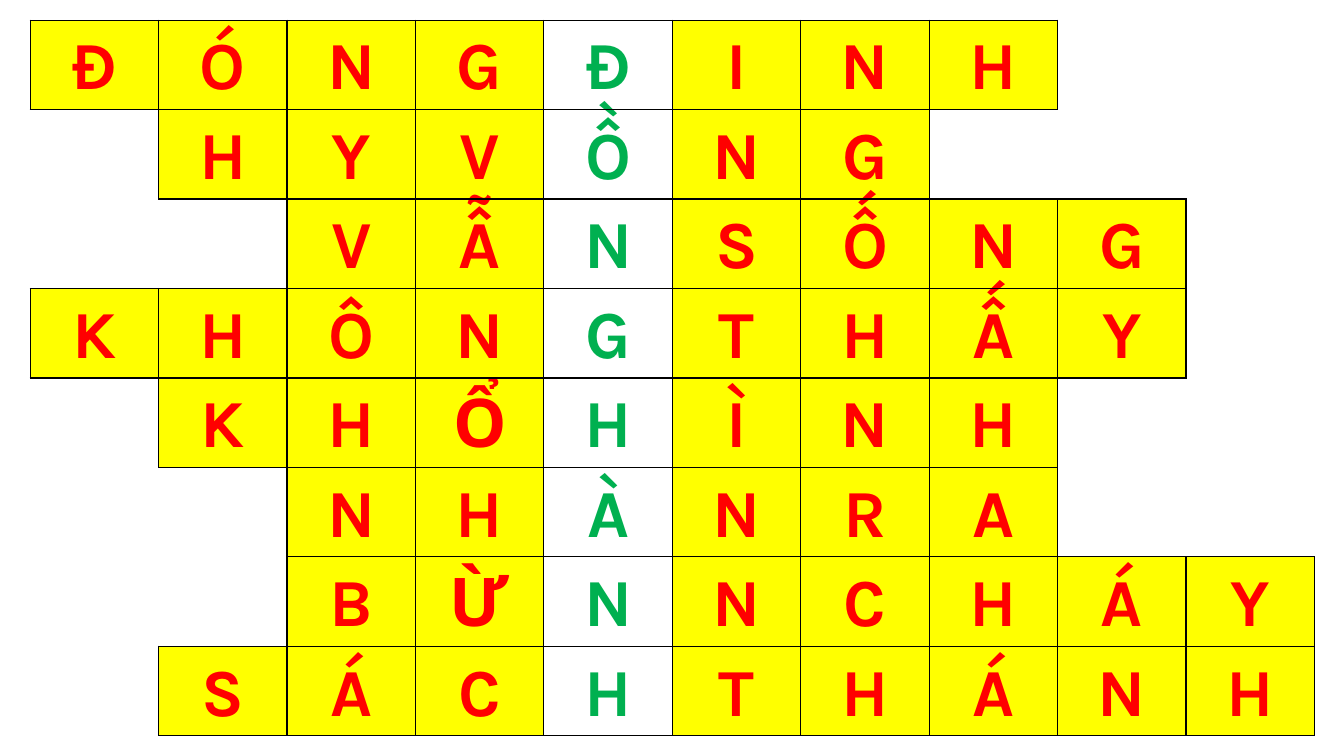
from lxml import etree
from pptx import Presentation
from pptx.dml.color import RGBColor
from pptx.enum.text import MSO_ANCHOR, PP_ALIGN
from pptx.oxml.ns import qn
from pptx.util import Inches, Pt

ANSWERS = [
    (0, "ĐÓNGĐINH"),
    (1, "HYVỒNG"),
    (2, "VẪNSỐNG"),
    (0, "KHÔNGTHẤY"),
    (1, "KHỔHÌNH"),
    (2, "NHÀNRA"),
    (2, "BỪNNCHÁY"),
    (1, "SÁCHTHÁNH"),
]
KEY_COLUMN = 4
COLUMNS = 10
LEFT, TOP, WIDTH, HEIGHT = 0.3, 0.2, 12.74, 7.1

RED = RGBColor(0xFF, 0x00, 0x00)
GREEN = RGBColor(0x00, 0xB0, 0x50)
YELLOW = RGBColor(0xFF, 0xFF, 0x00)
WHITE = RGBColor(0xFF, 0xFF, 0xFF)
BLACK = RGBColor(0x00, 0x00, 0x00)
FONT = "Karla"
CENTER = PP_ALIGN.CENTER
MIDDLE = MSO_ANCHOR.MIDDLE
SIDES = {"a:lnL": (0, -1), "a:lnR": (0, 1), "a:lnT": (-1, 0), "a:lnB": (1, 0)}


def draw_borders(cell, row, column, letters):
    properties = cell._tc.get_or_add_tcPr()
    for side, (down, across) in SIDES.items():
        line = etree.SubElement(properties, qn(side), w=str(Pt(1)))
        if (row, column) in letters or (row + down, column + across) in letters:
            fill = etree.SubElement(line, qn("a:solidFill"))
            etree.SubElement(fill, qn("a:srgbClr"), val=str(BLACK))
        else:
            etree.SubElement(line, qn("a:noFill"))


def write_letter(cell, letter, is_key):
    cell.fill.solid()
    cell.fill.fore_color.rgb = WHITE if is_key else YELLOW
    paragraph = cell.text_frame.paragraphs[0]
    paragraph.alignment = CENTER
    paragraph.line_spacing = 1.07
    run = paragraph.add_run()
    run.text = letter
    run.font.name = FONT
    run.font.size = Pt(48)
    run.font.bold = True
    run.font.color.rgb = GREEN if is_key else RED


def main():
    deck = Presentation()
    deck.slide_width, deck.slide_height = Inches(13.33), Inches(7.5)
    slide = deck.slides.add_slide(deck.slide_layouts[6])
    crossword = slide.shapes.add_table(
        len(ANSWERS), COLUMNS, Inches(LEFT), Inches(TOP), Inches(WIDTH), Inches(HEIGHT)
    ).table
    crossword.first_row = False
    crossword.horz_banding = False

    letters = {
        (row, start + position): letter
        for row, (start, answer) in enumerate(ANSWERS)
        for position, letter in enumerate(answer)
    }
    for row in range(len(ANSWERS)):
        for column in range(COLUMNS):
            cell = crossword.cell(row, column)
            cell.vertical_anchor = MIDDLE
            cell.margin_left = cell.margin_right = Inches(0.07)
            cell.margin_top = cell.margin_bottom = 0
            draw_borders(cell, row, column, letters)
            if (row, column) in letters:
                write_letter(cell, letters[row, column], column == KEY_COLUMN)
            else:
                cell.fill.background()

    deck.save("out.pptx")


if __name__ == "__main__":
    main()
